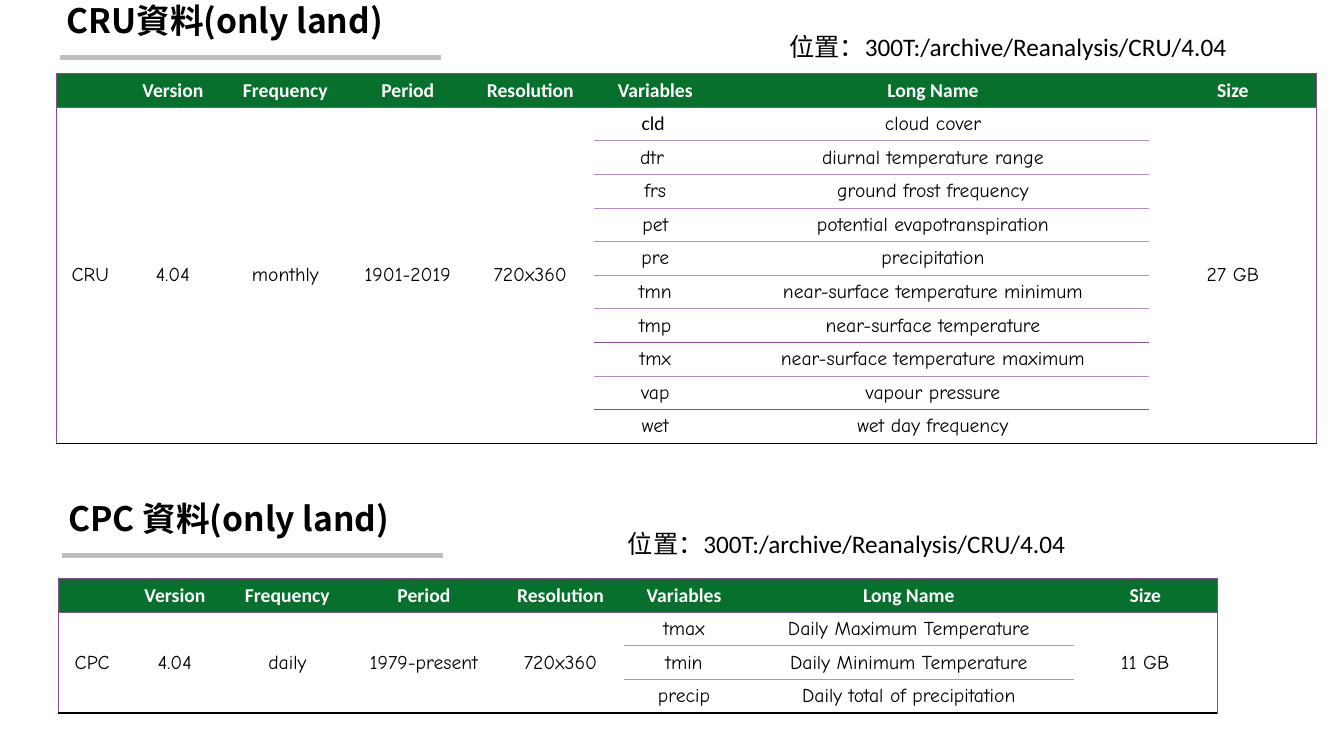
from dataclasses import dataclass

from lxml import etree
from pptx import Presentation
from pptx.dml.color import RGBColor
from pptx.enum.shapes import MSO_CONNECTOR
from pptx.enum.text import MSO_ANCHOR, MSO_AUTO_SIZE, PP_ALIGN
from pptx.oxml.ns import qn
from pptx.slide import Slide
from pptx.table import _Cell
from pptx.util import Emu, Inches, Pt

STRAIGHT = MSO_CONNECTOR.STRAIGHT
MIDDLE = MSO_ANCHOR.MIDDLE
GROW = MSO_AUTO_SIZE.SHAPE_TO_FIT_TEXT
CENTER = PP_ALIGN.CENTER

BLACK = RGBColor(0x00, 0x00, 0x00)
WHITE = RGBColor(0xFF, 0xFF, 0xFF)
GRAY = RGBColor(0xBF, 0xBF, 0xBF)
GREEN = RGBColor(0x07, 0x70, 0x2C)
PURPLE = RGBColor(0x82, 0x4F, 0x8C)
LILAC = RGBColor(0xB8, 0x8F, 0xC0)

TITLE_FONT = "Noto Sans CJK TC"
PLAIN_FONT = "Calibri"
BODY_FONT = "Comic Neue"
PLAIN_TABLE_STYLE = "{2D5ABB26-0587-4C30-8999-92F81FD0307C}"

# The slide is a grid of 100 columns by 100 rows.
SLIDE_WIDTH, SLIDE_HEIGHT = Inches(13.33), Inches(7.5)
TITLE_WIDTH, TITLE_HEIGHT = 28.58, 6.67
RULE_INDENT, RULE_DROP, RULE_LENGTH = 0.23, 7.6, 28.4
LOCATION_WIDTH, LOCATION_HEIGHT = 41.03, 5.33
TABLE_ROW = 4.45

HEADINGS = ("", "Version", "Frequency", "Period", "Resolution",
            "Variables", "Long Name", "Size")
VARIABLE_COLUMNS = (5, 6)
LOCATION = "位置：300T:/archive/Reanalysis/CRU/4.04"


@dataclass(frozen=True)
class Border:
    color: RGBColor
    points: float


FRAME = Border(PURPLE, 0.5)
DIVIDER = Border(LILAC, 0.75)
BASE = Border(BLACK, 1)


@dataclass(frozen=True)
class Variable:
    name: str
    long_name: str
    font: str = BODY_FONT
    divider: Border = DIVIDER


@dataclass(frozen=True)
class Dataset:
    title: str
    left: float
    top: float
    location_left: float
    location_top: float
    table_top: float
    widths: tuple[float, ...]
    facts: tuple[str, ...]
    size: str
    variables: tuple[Variable, ...]


DATASETS = (
    Dataset(
        "CRU資料(only land)", 4.2, 0, 57.98, 3.47, 9.73,
        (5.03, 7.28, 9.45, 8.78, 9.45, 9.15, 32.18, 12.45),
        ("CRU", "4.04", "monthly", "1901-2019", "720x360"), "27 GB",
        (
            Variable("cld ", "cloud cover", font=PLAIN_FONT),
            Variable("dtr ", "diurnal temperature range"),
            Variable("frs", "ground frost frequency"),
            Variable("pet", "potential evapotranspiration"),
            Variable("pre", "precipitation"),
            Variable("tmn", "near-surface temperature minimum"),
            Variable("tmp", "near-surface temperature", divider=FRAME),
            Variable("tmx", "near-surface temperature maximum"),
            Variable("vap", "vapour pressure", divider=FRAME),
            Variable("wet", "wet day frequency"),
        ),
    ),
    Dataset(
        "CPC 資料(only land)", 4.35, 65.87, 45.98, 69.2, 76.53,
        (5.03, 7.28, 9.45, 10.88, 9.45, 8.93, 24.53, 10.65),
        ("CPC", "4.04", "daily", "1979-present", "720x360"), "11 GB",
        (
            Variable("tmax", "Daily Maximum Temperature"),
            Variable("tmin", "Daily Minimum Temperature"),
            Variable("precip", "Daily total of precipitation"),
        ),
    ),
)


def across(columns: float) -> Emu:
    return Emu(round(SLIDE_WIDTH * columns / 100))


def down(rows: float) -> Emu:
    return Emu(round(SLIDE_HEIGHT * rows / 100))


def add_text(slide: Slide, text: str, left: float, top: float, width: float,
             height: float, font: str, points: int, bold: bool, inset: float) -> None:
    box = slide.shapes.add_textbox(across(left), down(top), across(width), down(height))
    frame = box.text_frame
    frame.word_wrap = True
    frame.auto_size = GROW
    frame.margin_top = frame.margin_bottom = Inches(inset)
    paragraph = frame.paragraphs[0]
    paragraph.text = text
    paragraph.font.name, paragraph.font.size = font, Pt(points)
    paragraph.font.bold, paragraph.font.color.rgb = bold, BLACK


def add_title_rule(slide: Slide, left: float, top: float) -> None:
    rule = slide.shapes.add_connector(
        STRAIGHT, across(left), down(top), across(left + RULE_LENGTH), down(top))
    rule.line.color.rgb = GRAY
    rule.line.width = Pt(3)
    etree.SubElement(rule._element.spPr, qn("a:effectLst"))


def set_borders(cell: _Cell, borders: dict[str, Border]) -> None:
    """Draw the given sides, keyed L, R, T and B in that order."""
    properties = cell._tc.get_or_add_tcPr()
    for side, border in borders.items():
        line = etree.SubElement(properties, qn(f"a:ln{side}"), w=str(Pt(border.points)))
        fill = etree.SubElement(line, qn("a:solidFill"))
        etree.SubElement(fill, qn("a:srgbClr"), val=str(border.color))


def cell_borders(dataset: Dataset, row: int, column: int) -> dict[str, Border]:
    last_row = len(dataset.variables)
    borders = {}
    if column == 0:
        borders["L"] = FRAME
    if column == len(HEADINGS) - 1:
        borders["R"] = FRAME
    listed = column in VARIABLE_COLUMNS
    if row <= 1:
        borders["T"] = FRAME
    elif listed:
        borders["T"] = dataset.variables[row - 2].divider
    if row == 0:
        borders["B"] = FRAME
    elif row == last_row or (row == 1 and not listed):
        borders["B"] = BASE
    elif listed:
        borders["B"] = dataset.variables[row - 1].divider
    return borders


def style_cell(cell: _Cell, text: str, font: str, heading: bool) -> None:
    cell.vertical_anchor = MIDDLE
    cell.margin_top = cell.margin_bottom = 0
    if heading:
        cell.fill.solid()
        cell.fill.fore_color.rgb = GREEN
    else:
        cell.fill.background()
    paragraph = cell.text_frame.paragraphs[0]
    paragraph.text = text
    paragraph.alignment = CENTER
    paragraph.font.name, paragraph.font.size = font, Pt(14)
    paragraph.font.bold = heading
    paragraph.font.color.rgb = WHITE if heading else BLACK


def add_dataset_table(slide: Slide, dataset: Dataset) -> None:
    row_count = len(dataset.variables) + 1
    frame = slide.shapes.add_table(
        row_count, len(HEADINGS), across(dataset.left), down(dataset.table_top),
        across(sum(dataset.widths)), down(TABLE_ROW * row_count))
    table = frame.table
    table.first_row = table.horz_banding = False
    for style in frame._element.iter(qn("a:tableStyleId")):
        style.text = PLAIN_TABLE_STYLE
    for column, width in zip(table.columns, dataset.widths):
        column.width = across(width)

    body = [(*(dataset.facts if index == 0 else [""] * len(dataset.facts)),
             variable.name, variable.long_name, dataset.size if index == 0 else "")
            for index, variable in enumerate(dataset.variables)]
    for row, texts in enumerate([HEADINGS, *body]):
        table.rows[row].height = down(TABLE_ROW)
        for column, text in enumerate(texts):
            cell = table.cell(row, column)
            font = BODY_FONT
            if row == 0:
                font = PLAIN_FONT
            elif column == VARIABLE_COLUMNS[0]:
                font = dataset.variables[row - 1].font
            set_borders(cell, cell_borders(dataset, row, column))
            style_cell(cell, text, font, heading=row == 0)
    for column in range(len(HEADINGS)):
        if column not in VARIABLE_COLUMNS:
            table.cell(1, column).merge(table.cell(row_count - 1, column))


def main() -> None:
    deck = Presentation()
    deck.slide_width, deck.slide_height = SLIDE_WIDTH, SLIDE_HEIGHT
    slide = deck.slides.add_slide(deck.slide_layouts[6])
    for dataset in DATASETS:
        add_title_rule(slide, dataset.left + RULE_INDENT, dataset.top + RULE_DROP)
        add_text(slide, dataset.title, dataset.left, dataset.top, TITLE_WIDTH,
                 TITLE_HEIGHT, TITLE_FONT, 24, bold=True, inset=0)
        add_text(slide, LOCATION, dataset.location_left, dataset.location_top,
                 LOCATION_WIDTH, LOCATION_HEIGHT, PLAIN_FONT, 18, bold=False, inset=0.05)
        add_dataset_table(slide, dataset)
    deck.save("out.pptx")


if __name__ == "__main__":
    main()
